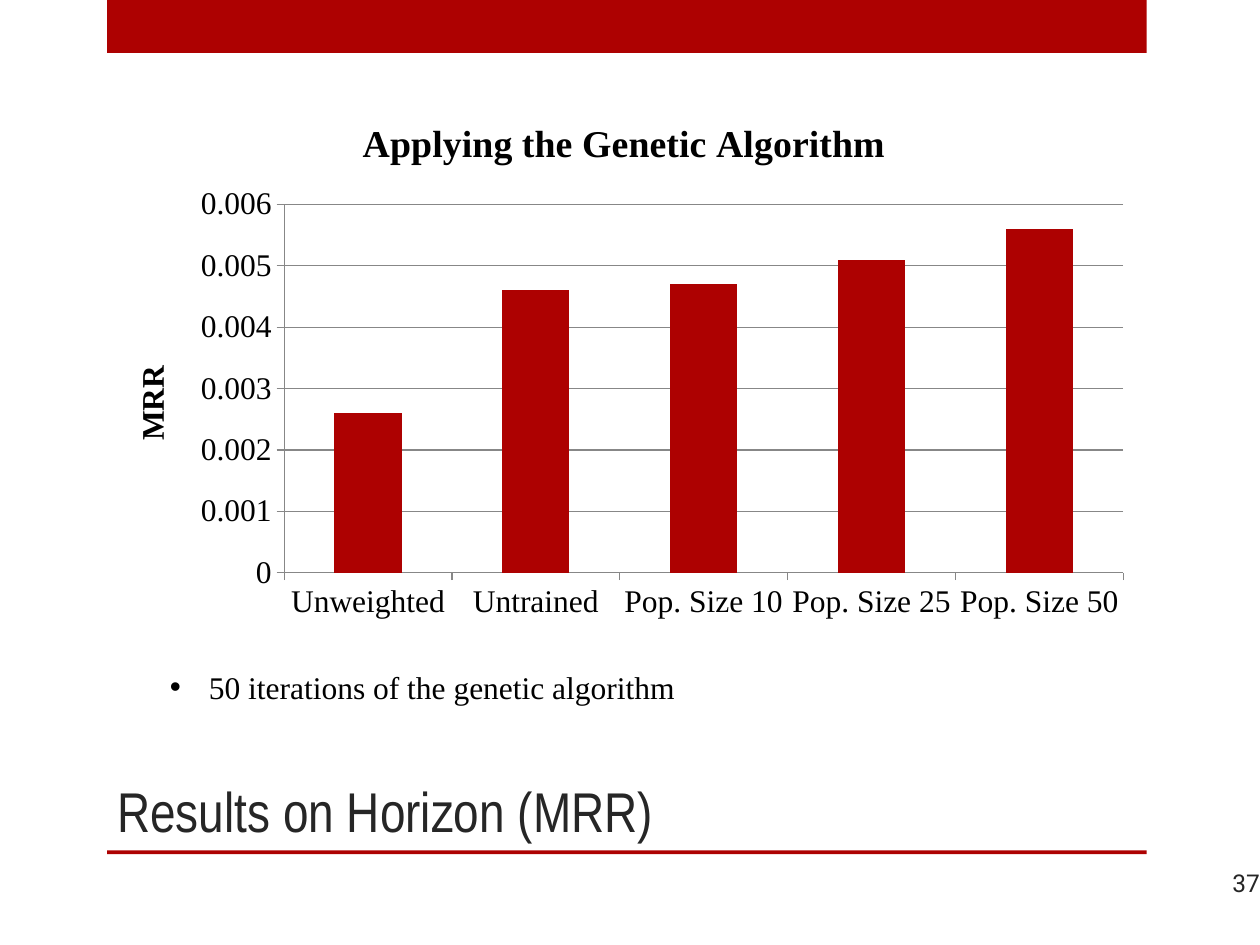
import pptx
import pptx.chart.data
import pptx.dml.color
import pptx.enum.chart
import pptx.enum.shapes
import pptx.enum.text
import pptx.util
from pptx.util import Inches

COLORS = {"red": "AD0101", "dark": "262626", "black": "000000", "axis": "878787"}
SERIF = "Times New Roman"
TITLE = "Applying the Genetic Algorithm"
MRR = {
    "Unweighted": 0.0026,
    "Untrained": 0.0046,
    "Pop. Size 10": 0.0047,
    "Pop. Size 25": 0.0051,
    "Pop. Size 50": 0.0056,
}


def rgb(name):
    return pptx.dml.color.RGBColor.from_string(COLORS[name])


def write(tf, text, size=18, font=SERIF, color="black", bold=False, align=None):
    p = tf.paragraphs[0]
    p.alignment = align
    r = p.add_run()
    r.text = text
    r.font.size = pptx.util.Pt(size)
    r.font.name = font
    r.font.bold = bold
    r.font.color.rgb = rgb(color)
    return p


prs = pptx.Presentation()
prs.slide_width, prs.slide_height = Inches(10), Inches(7.5)
s = prs.slides.add_slide(prs.slide_layouts[5])

# Top band and rule under the title
for top, height in ((0, 0.42), (6.75, 0.03)):
    sp = s.shapes.add_shape(pptx.enum.shapes.MSO_SHAPE.RECTANGLE,
                            Inches(0.85), Inches(top), Inches(8.25), Inches(height))
    sp.shadow.inherit = False
    sp.fill.solid()
    sp.fill.fore_color.rgb = rgb("red")
    sp.line.fill.background()

# Title
sp = s.shapes.title
sp.left, sp.top, sp.width, sp.height = Inches(0.83), Inches(5), Inches(7.42), Inches(1.75)
tf = sp.text_frame
tf.word_wrap = True
tf.vertical_anchor = pptx.enum.text.MSO_ANCHOR.BOTTOM
write(tf, "Results on Horizon (MRR)", size=32, font="Arial Narrow", color="dark",
      align=pptx.enum.text.PP_ALIGN.LEFT)

# Column chart
data = pptx.chart.data.CategoryChartData()
data.categories = list(MRR)
data.add_series(TITLE, list(MRR.values()))
chart = s.shapes.add_chart(pptx.enum.chart.XL_CHART_TYPE.COLUMN_CLUSTERED,
                           Inches(0.83), Inches(0.75), Inches(8.25), Inches(4.25),
                           data).chart
chart.font.size = pptx.util.Pt(18)
chart.font.name = SERIF
chart.font.color.rgb = rgb("black")
chart.has_legend = False
chart.has_title = True
write(chart.chart_title.text_frame, TITLE, size=21.6, bold=True)

plot = chart.plots[0]
plot.vary_by_categories = False
plot.gap_width = 150
fill = plot.series[0].format.fill
fill.solid()
fill.fore_color.rgb = rgb("red")

# Axes
val = chart.value_axis
val.minimum_scale, val.maximum_scale, val.major_unit = 0, 0.006, 0.001
val.has_major_gridlines = True
val.has_title = True
write(val.axis_title.text_frame, "MRR", bold=True)
for axis in (val, chart.category_axis):
    axis.major_tick_mark = pptx.enum.chart.XL_TICK_MARK.OUTSIDE
for part in (val, chart.category_axis, val.major_gridlines):
    part.format.line.color.rgb = rgb("axis")
    part.format.line.width = pptx.util.Pt(0.75)

# Slide number
tf = s.shapes.add_textbox(Inches(9.33), Inches(6.78), Inches(0.67), Inches(0.45)).text_frame
tf.word_wrap = True
tf.vertical_anchor = pptx.enum.text.MSO_ANCHOR.MIDDLE
tf.margin_right = 0
write(tf, "37", size=14, font="Roboto", color="dark", align=pptx.enum.text.PP_ALIGN.RIGHT)

# Bulleted note
tf = s.shapes.add_textbox(Inches(1.25), Inches(5.25), Inches(4.26), Inches(0.4)).text_frame
tf.word_wrap = False
tf.auto_size = pptx.enum.text.MSO_AUTO_SIZE.SHAPE_TO_FIT_TEXT
p = write(tf, "50 iterations of the genetic algorithm")
pPr = p._p.get_or_add_pPr()
pPr.set("marL", str(Inches(0.31)))
pPr.set("indent", str(-Inches(0.31)))
ns = pptx.oxml.ns.qn
pPr.makeelement(ns("a:buFont"), {})
for tag, attrs in (("a:buFont", {"typeface": "Arial"}), ("a:buChar", {"char": "•"})):
    pPr.append(pPr.makeelement(ns(tag), attrs))

prs.save("out.pptx")
